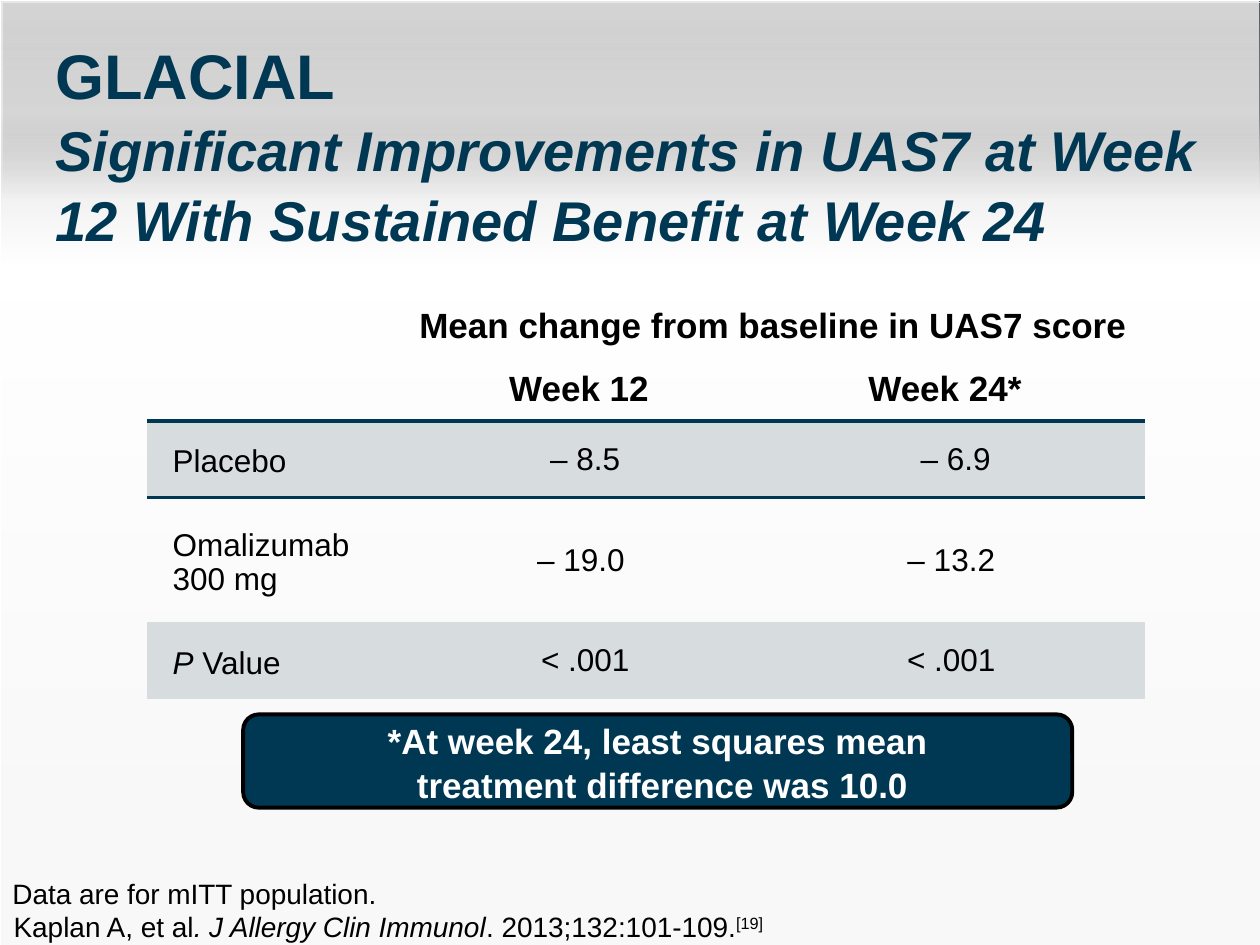
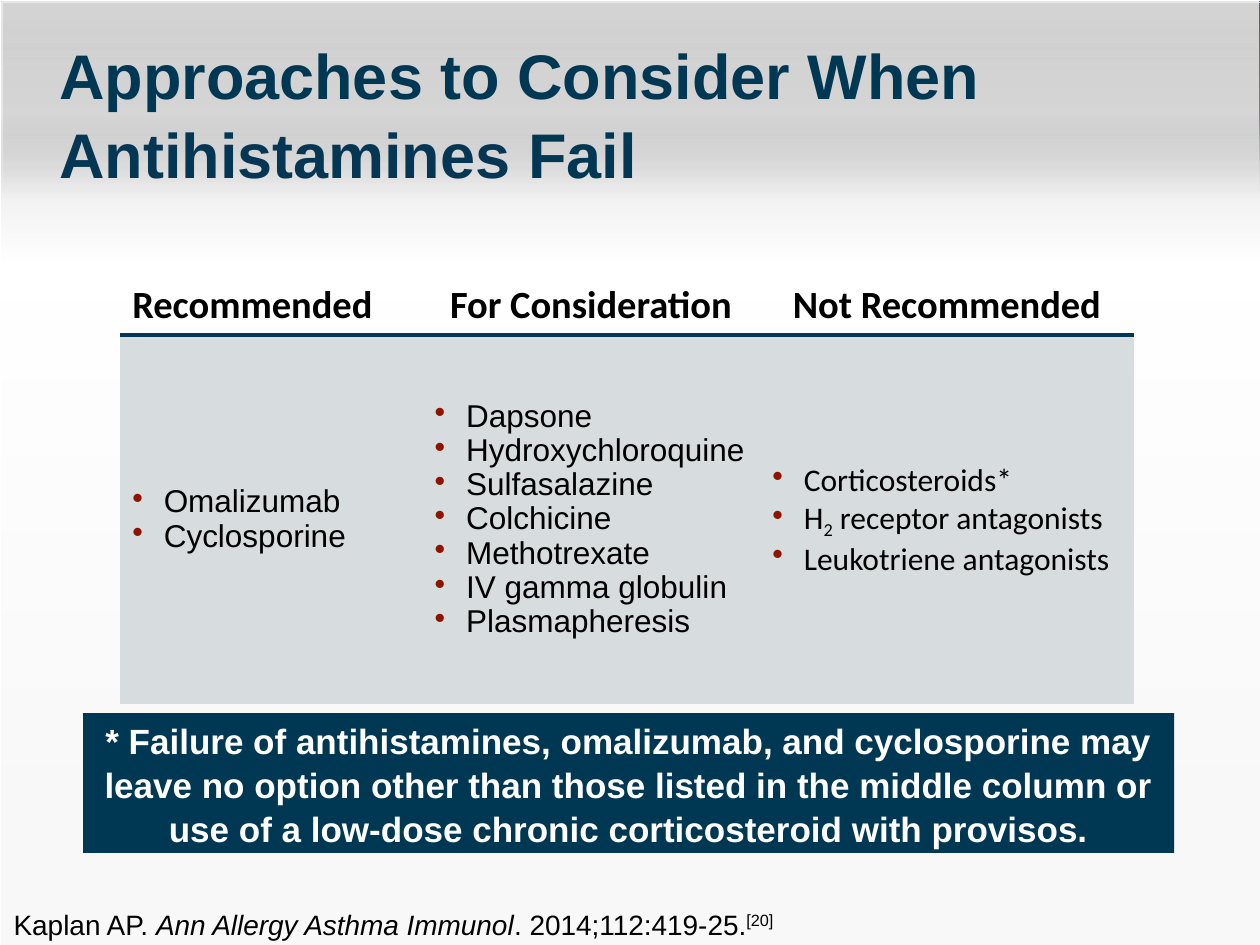
"""Build two slides on chronic urticaria: GLACIAL trial results and treatment options."""
import pptx
import pptx.dml.color
import pptx.enum.shapes
import pptx.enum.text
import pptx.oxml
import pptx.oxml.ns
import pptx.util

Inches = pptx.util.Inches
Pt = pptx.util.Pt
RGB = pptx.dml.color.RGBColor.from_string
SHAPE = pptx.enum.shapes.MSO_SHAPE
ALIGN = pptx.enum.text.PP_ALIGN
ANCHOR = pptx.enum.text.MSO_ANCHOR
qn = pptx.oxml.ns.qn
NAMESPACE = pptx.oxml.ns.nsdecls("a")

THEME = {
    "font": "Arial", "list_font": "Calibri",
    "navy": "003854", "title_accent": "053754", "black": "000000", "white": "FFFFFF",
    "band": "D7DCDF", "frame": "444E54", "bullet": "8E1400",
    "title": 36, "subtitle": 32, "column": 22, "strong": 20, "body": 18, "source": 16,
    "rule": 2.25, "title_spacing": 1.05, "body_spacing": 0.97, "header_spacing": 0.9,
    "gradient": [(0, "808080", 18), (12, "B3B3B3", 31), (21, "F2F2F2", 100),
                 (28, "FFFFFF", 100), (85, "F8F8F8", 100)],
    "plain_table": "{2D5ABB26-0587-4C30-8999-92F81FD0307C}",
}
ITALIC = {"italic": True}
SUPERSCRIPT = {"baseline": "30000"}
SUBSCRIPT = {"baseline": "-25000"}


def write(frame, lines, size, color="black", font="font", bold=False, align=ALIGN.LEFT,
          spacing=None, bulleted=False, shadow=False):
    """Fill a text frame with paragraphs of (text, style) runs; a plain string is one run."""
    frame.word_wrap = True
    for number, line in enumerate(lines):
        paragraph = frame.paragraphs[0] if number == 0 else frame.add_paragraph()
        paragraph.alignment = align
        paragraph.line_spacing = spacing
        if bulleted:
            properties = paragraph._p.get_or_add_pPr()
            properties.set("marL", str(Inches(0.25)))
            properties.set("indent", str(-Inches(0.25)))
            properties.append(pptx.oxml.parse_xml(
                f'<a:buClr {NAMESPACE}><a:srgbClr val="{THEME["bullet"]}"/></a:buClr>'))
            properties.append(pptx.oxml.parse_xml(f'<a:buChar {NAMESPACE} char="•"/>'))
        for text, style in [(line, {})] if isinstance(line, str) else line:
            for part_number, part in enumerate(text.split("\n")):
                if part_number:
                    paragraph.add_line_break()
                if not part:
                    continue
                run = paragraph.add_run()
                run.text = part
                run.font.name = THEME[font]
                run.font.size = Pt(THEME[style.get("size", size)])
                run.font.bold = bold
                run.font.italic = style.get("italic", False)
                run.font.color.rgb = RGB(THEME[style.get("color", color)])
                properties = run._r.get_or_add_rPr()
                if "baseline" in style:
                    properties.set("baseline", style["baseline"])
                if shadow:
                    properties.find(qn("a:solidFill")).addnext(pptx.oxml.parse_xml(
                        f'<a:effectLst {NAMESPACE}><a:outerShdw blurRad="38100" dist="38100" '
                        'dir="2700000"><a:srgbClr val="C0C0C0"/></a:outerShdw></a:effectLst>'))


def add_ruled_table(slide, left, top, widths, heights, header_rows):
    """Add an unstyled table with a rule under its header and alternate body rows shaded."""
    table = slide.shapes.add_table(len(heights), len(widths), Inches(left), Inches(top),
                                   Inches(sum(widths)), Inches(sum(heights))).table
    table.first_row = table.horz_banding = False
    table._tbl.tblPr.find(qn("a:tableStyleId")).text = THEME["plain_table"]
    for column, width in zip(table.columns, widths):
        column.width = Inches(width)
    for row_number, height in enumerate(heights):
        table.rows[row_number].height = Inches(height)
        body_number = row_number - header_rows
        for cell in table.rows[row_number].cells:
            cell.vertical_anchor = ANCHOR.BOTTOM if body_number < 0 else ANCHOR.MIDDLE
            if body_number >= 0 and body_number % 2 == 0:
                cell.fill.solid()
                cell.fill.fore_color.rgb = RGB(THEME["band"])
            else:
                cell.fill.background()
            side = {-1: "lnB", 0: "lnT"}.get(body_number)
            if side:
                cell._tc.get_or_add_tcPr().insert(0, pptx.oxml.parse_xml(
                    f'<a:{side} {NAMESPACE} w="{Pt(THEME["rule"])}"><a:solidFill>'
                    f'<a:srgbClr val="{THEME["navy"]}"/></a:solidFill></a:{side}>'))
    return table


presentation = pptx.Presentation()
presentation.slide_width = Inches(10)
presentation.slide_height = Inches(7.5)
slides = [presentation.slides.add_slide(presentation.slide_layouts[5]) for _ in range(2)]
glacial, approaches = slides

stops = "".join(
    f'<a:gs pos="{position * 1000}"><a:srgbClr val="{color}"><a:alpha val="{alpha * 1000}"/>'
    "</a:srgbClr></a:gs>" for position, color, alpha in THEME["gradient"])
master_tree = presentation.slide_master.element.cSld.spTree
for layer, (offset, line_color, line_width) in enumerate(
        [(0, "frame", 1.5), (0.02, "white", 0.25), (0, "white", 0.25)]):
    backdrop = glacial.shapes.add_shape(SHAPE.RECTANGLE, Inches(offset), Inches(offset),
                                        Inches(10), Inches(7.5))
    backdrop.shadow.inherit = False
    backdrop.line.color.rgb = RGB(THEME[line_color])
    backdrop.line.width = Pt(line_width)
    backdrop.fill.background()
    if layer:
        empty_fill = backdrop.element.spPr.find(qn("a:noFill"))
        backdrop.element.spPr.replace(empty_fill, pptx.oxml.parse_xml(
            f'<a:gradFill {NAMESPACE} rotWithShape="1"><a:gsLst>{stops}</a:gsLst>'
            '<a:lin ang="5400000" scaled="0"/></a:gradFill>'))
    backdrop.element.nvSpPr.cNvPr.set("id", str(100 + layer))
    master_tree.insert(2 + layer, backdrop.element)

titles = [
    (glacial, (0.34, 0.21, 9.43, 1.7),
     [("GLACIAL\n", {}),
      ("Significant Improvements in UAS7 at Week 12 With Sustained Benefit at Week 24",
       {"size": "subtitle", "italic": True})]),
    (approaches, (0.37, 0.21, 9.2, 1.31),
     [("Approaches to Consider When ", {}),
      ("Antihistamines", {"color": "title_accent"}), (" Fail", {})]),
]
for slide, box, runs in titles:
    title = slide.shapes.title
    title.left, title.top, title.width, title.height = map(Inches, box)
    title.text_frame.auto_size = pptx.enum.text.MSO_AUTO_SIZE.NONE
    title.text_frame.vertical_anchor = ANCHOR.TOP
    write(title.text_frame, [runs], "title", "navy", bold=True,
          spacing=THEME["title_spacing"], shadow=True)

callouts = [
    (glacial, SHAPE.ROUNDED_RECTANGLE, (1.93, 5.67, 6.58, 0.74),
     "*At week 24, least squares mean\n treatment difference was 10.0"),
    (approaches, SHAPE.RECTANGLE, (0.66, 5.66, 8.66, 1.11),
     "* Failure of antihistamines, omalizumab, and cyclosporine may leave no option other than "
     "those listed in the middle column or use of a low-dose chronic corticosteroid with "
     "provisos."),
]
for slide, outline, box, text in callouts:
    callout = slide.shapes.add_shape(outline, *map(Inches, box))
    callout.shadow.inherit = False
    callout.fill.solid()
    callout.fill.fore_color.rgb = RGB(THEME["navy"])
    if outline == SHAPE.ROUNDED_RECTANGLE:
        callout.line.color.rgb = RGB(THEME["black"])
        callout.line.width = Pt(THEME["rule"])
    else:
        callout.line.fill.background()
    callout.text_frame.vertical_anchor = ANCHOR.MIDDLE
    write(callout.text_frame, [text], "strong", "white", bold=True, align=ALIGN.CENTER,
          spacing=THEME["title_spacing"])

sources = [
    (glacial, (0, 6.9, 7.75, 0.37), ANCHOR.BOTTOM, "Data are for mITT population."),
    (glacial, (0.01, 7.17, 8.05, 0.37), ANCHOR.MIDDLE,
     [("Kaplan A, et al", {}), (". J Allergy Clin Immunol", ITALIC),
      (". 2013;132:101-109.", {}), ("[19]", SUPERSCRIPT)]),
    (approaches, (0.01, 7.15, 9.99, 0.37), ANCHOR.MIDDLE,
     [("Kaplan AP. ", {}), ("Ann Allergy Asthma Immunol", ITALIC),
      (". 2014;112:419-25.", {}), ("[20]", SUPERSCRIPT)]),
]
for slide, box, anchor, line in sources:
    source = slide.shapes.add_textbox(*map(Inches, box))
    source.text_frame.vertical_anchor = anchor
    write(source.text_frame, [line], "source")

scores = add_ruled_table(glacial, 1.17, 2.34, [2.11, 2.73, 3.08],
                         [0.5, 0.5, 0.61, 0.99, 0.61], header_rows=2)
scores.cell(0, 0).merge(scores.cell(1, 0))
scores.cell(0, 1).merge(scores.cell(0, 2))
for row, column, text in [(0, 1, "Mean change from baseline in UAS7 score"),
                          (1, 1, "Week 12"), (1, 2, "Week 24*")]:
    cell = scores.cell(row, column)
    cell.margin_left, cell.margin_bottom = 0, Inches(0.1)
    write(cell.text_frame, [text], "strong", bold=True, align=ALIGN.CENTER,
          spacing=THEME["header_spacing"])
score_rows = [
    (["Placebo"], "– 8.5", " – 6.9"),
    (["Omalizumab", "300 mg"], "– 19.0 ", "– 13.2"),
    ([[("P", ITALIC), (" Value", {})]], "< .001", "< .001"),
]
for row, (label, *values) in enumerate(score_rows, start=2):
    cell = scores.cell(row, 0)
    cell.margin_left, cell.margin_bottom = Inches(0.2), 0
    write(cell.text_frame, label, "body", spacing=THEME["body_spacing"])
    for column, value in enumerate(values, start=1):
        write(scores.cell(row, column).text_frame, [value], "body", align=ALIGN.CENTER)

options = add_ruled_table(approaches, 0.95, 1.68, [2.4, 2.68, 2.97], [0.98, 2.93],
                          header_rows=1)
option_columns = [
    ("Recommended", ALIGN.LEFT, "font", ["Omalizumab", "Cyclosporine"]),
    ("For Consideration", ALIGN.CENTER, "font",
     ["Dapsone", "Hydroxychloroquine", "Sulfasalazine", "Colchicine", "Methotrexate",
      "IV gamma globulin", "Plasmapheresis"]),
    ("Not Recommended", ALIGN.CENTER, "list_font",
     ["Corticosteroids*", [("H", {}), ("2", SUBSCRIPT), (" receptor antagonists", {})],
      "Leukotriene antagonists"]),
]
for column, (heading, align, font, items) in enumerate(option_columns):
    write(options.cell(0, column).text_frame, [heading], "column", font="list_font",
          bold=True, align=align)
    write(options.cell(1, column).text_frame, items, "body", font=font,
          spacing=THEME["body_spacing"], bulleted=True)

presentation.save("out.pptx")
